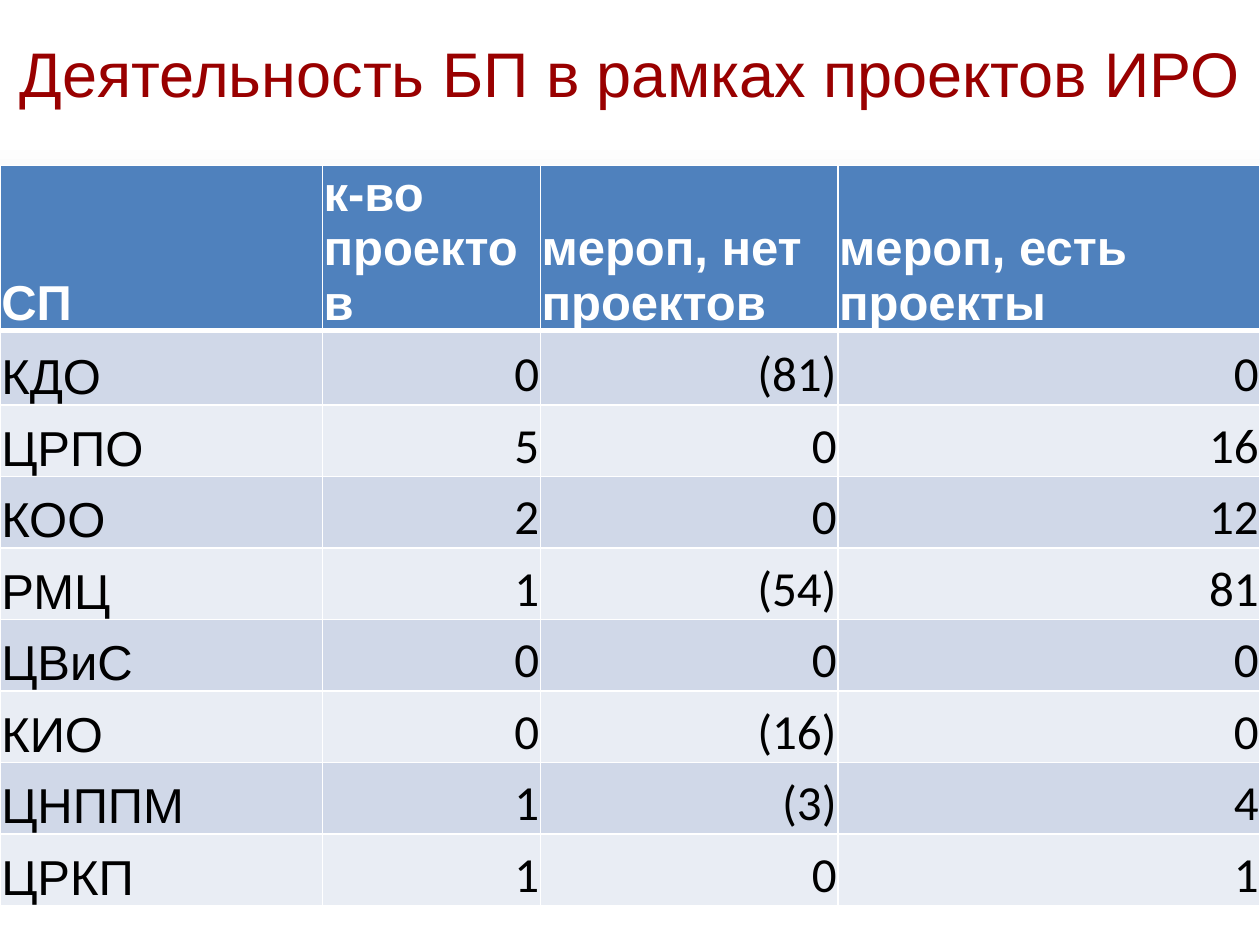
from pptx import Presentation
from pptx.dml.color import RGBColor
from pptx.enum.shapes import MSO_SHAPE
from pptx.enum.text import MSO_ANCHOR, PP_ALIGN
from pptx.oxml import parse_xml
from pptx.oxml.ns import nsdecls
from pptx.util import Pt

RECTANGLE = MSO_SHAPE.RECTANGLE
MIDDLE, BOTTOM = MSO_ANCHOR.MIDDLE, MSO_ANCHOR.BOTTOM
LEFT, CENTER, RIGHT = PP_ALIGN.LEFT, PP_ALIGN.CENTER, PP_ALIGN.RIGHT

COLORS = {
    "title": "990000",
    "white": "FFFFFF",
    "black": "000000",
    "header": "4F81BD",
    "odd": "D0D8E8",
    "even": "E9EDF4",
}
BACKDROP = [(0, "FFFFFF"), (15, "FFFFFF"), (32, "D9D9D9"),
            (54, "D9D9D9"), (85, "BFBFBF"), (100, "E6E6E6")]
COLUMN_WIDTHS = [184.2, 124.6, 170, 241.2]
ROW_HEIGHTS = [80, 42.5] + [40.9] * 7
ROWS = [
    ("СП", "к-во проектов", "мероп, нет проектов", "мероп, есть проекты"),
    ("КДО", "0", "(81)", "0"),
    ("ЦРПО", "5", "0", "16"),
    ("КОО", "2", "0", "12"),
    ("РМЦ", "1", "(54)", "81"),
    ("ЦВиС", "0", "0", "0"),
    ("КИО", "0", "(16)", "0"),
    ("ЦНППМ", "1", "(3)", "4"),
    ("ЦРКП", "1", "0", "1"),
]


def rgb(name):
    """Return the named colour."""
    return RGBColor.from_string(COLORS[name])


def add_span(para, text, font_name, size, color, bold=False):
    """Add a formatted run to a paragraph."""
    span = para.add_run()
    span.text = text
    span.font.name, span.font.size, span.font.bold = font_name, Pt(size), bold
    span.font.color.rgb = rgb(color)
    return span


def line_xml(tag, width, color):
    """Build a solid line element."""
    return parse_xml(
        f'<a:{tag} {nsdecls("a")} w="{Pt(width)}"><a:solidFill>'
        f'<a:srgbClr val="{COLORS[color]}"/></a:solidFill></a:{tag}>')


def paint_background(page):
    """Fill the page with a vertical gradient."""
    fill = page.background.fill
    fill.gradient()
    fill.gradient_angle = 270
    stops = page.element.xpath(".//p:bg//a:gsLst")[0]
    for stop in list(stops):
        stops.remove(stop)
    for percent, color in BACKDROP:
        stops.append(parse_xml(
            f'<a:gs {nsdecls("a")} pos="{percent * 1000}">'
            f'<a:srgbClr val="{color}"/></a:gs>'))


def add_band(page, left, top, width, height):
    """Add a plain white band."""
    band = page.shapes.add_shape(RECTANGLE, Pt(left), Pt(top), Pt(width), Pt(height))
    band.shadow.inherit = False
    band.fill.solid()
    band.fill.fore_color.rgb = rgb("white")
    band.line.fill.background()
    return band


def add_title(page, left, top, width, height):
    """Add the white title band with its outlined heading."""
    frame = add_band(page, left, top, width, height).text_frame
    frame.word_wrap = True
    frame.vertical_anchor = MIDDLE
    para = frame.paragraphs[0]
    para.alignment = CENTER
    span = add_span(para, "Деятельность БП в рамках проектов ИРО", "Arial", 36, "title")
    span.font._element.insert(0, line_xml("ln", 0.75, "title"))


def fill_cell(cell, text, row, column):
    """Write and style one table cell according to its place."""
    header, label = row == 0, column == 0
    cell.margin_left = cell.margin_right = cell.margin_top = Pt(0.75)
    cell.margin_bottom = Pt(0)
    cell.vertical_anchor = BOTTOM
    widths = {"lnL": 1, "lnR": 1, "lnT": 3 if row == 1 else 1, "lnB": 3 if header else 1}
    properties = cell._tc.get_or_add_tcPr()
    for tag, width in widths.items():
        properties.append(line_xml(tag, width, "white"))
    cell.fill.solid()
    cell.fill.fore_color.rgb = rgb("header" if header else "odd" if row % 2 else "even")
    para = cell.text_frame.paragraphs[0]
    para.alignment = LEFT if header or label else RIGHT
    add_span(para, text, "Arial" if header or label else "Calibri", 28,
             "white" if header else "black", header)


def add_project_table(page, left, top, width, height):
    """Add the table of projects and events by department."""
    table = page.shapes.add_table(len(ROWS), len(COLUMN_WIDTHS), Pt(left), Pt(top),
                                  Pt(width), Pt(height)).table
    for column, size in zip(table.columns, COLUMN_WIDTHS):
        column.width = Pt(size)
    for row, size in zip(table.rows, ROW_HEIGHTS):
        row.height = Pt(size)
    for row, values in enumerate(ROWS):
        for column, text in enumerate(values):
            fill_cell(table.cell(row, column), text, row, column)


def main():
    """Build and save the deck."""
    deck = Presentation()
    deck.slide_width, deck.slide_height = Pt(720), Pt(540)
    page = deck.slides.add_slide(deck.slide_layouts[6])
    paint_background(page)
    add_band(page, 0, 499.7, 720.7, 41.8)
    add_title(page, 0, 0, 720, 82.8)
    add_project_table(page, 0, 94.5, sum(COLUMN_WIDTHS), sum(ROW_HEIGHTS))
    deck.save("out.pptx")


if __name__ == "__main__":
    main()
